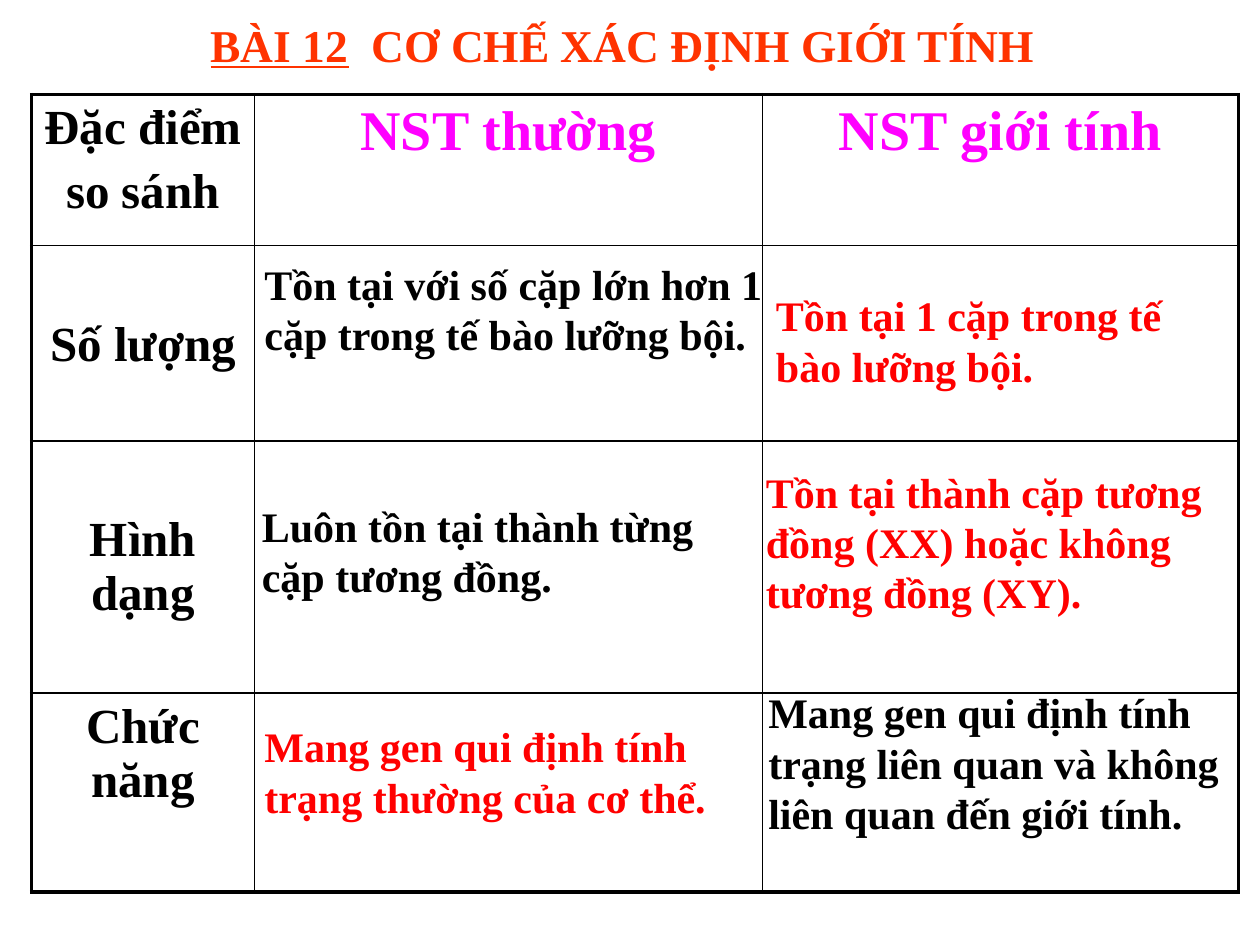
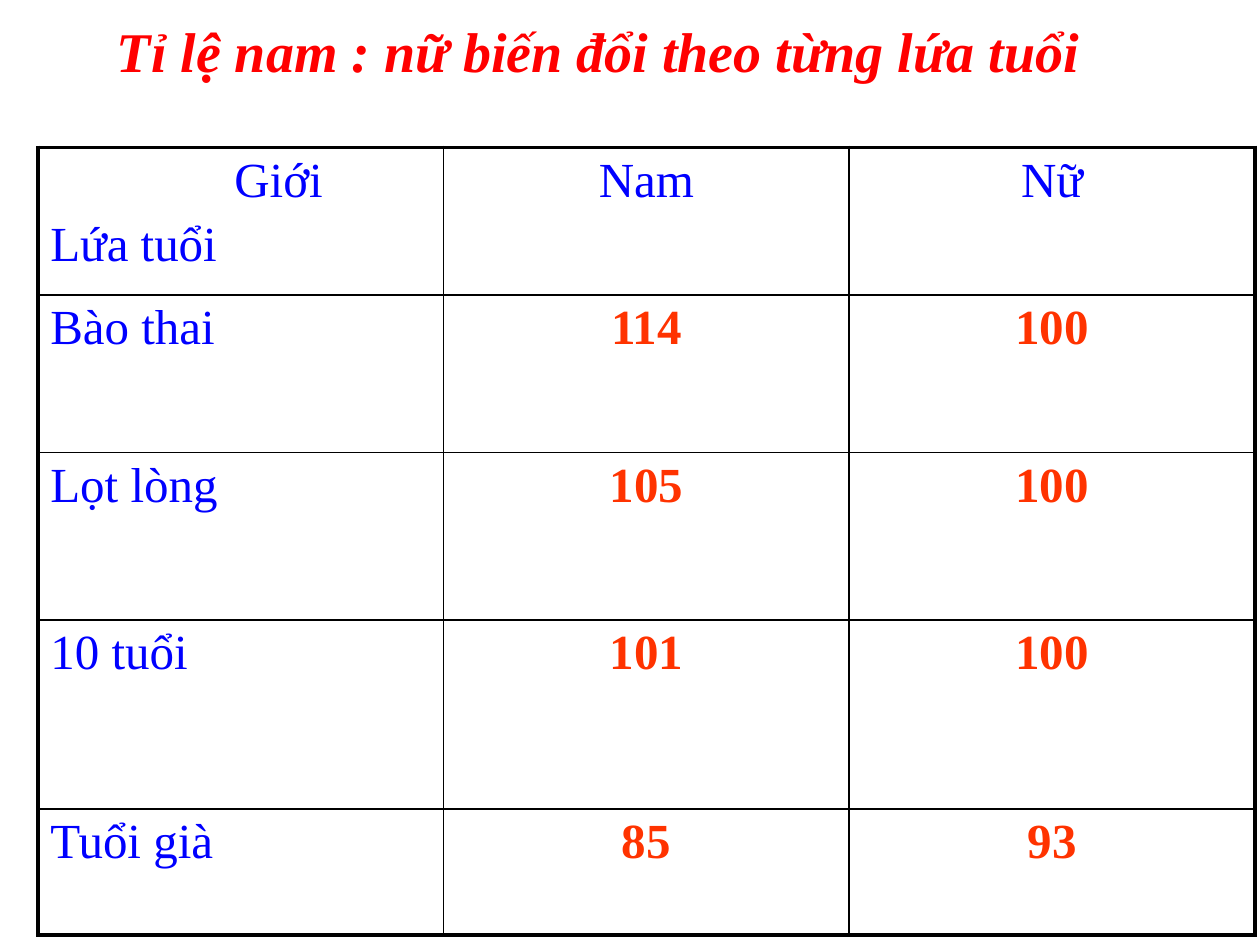
from lxml.etree import SubElement
from pptx import Presentation
from pptx.dml.color import RGBColor
from pptx.enum.text import MSO_AUTO_SIZE, PP_ALIGN
from pptx.oxml.ns import qn
from pptx.util import Inches, Pt

FONT = "Times New Roman"
BLACK = RGBColor(0, 0, 0)
WHITE = RGBColor(255, 255, 255)
RED = RGBColor(255, 0, 0)
ORANGE = RGBColor(255, 0x33, 0)
MAGENTA = RGBColor(255, 0, 255)
BLUE = RGBColor(0, 0, 255)
THICK, THIN = 2.25, 1

LESSON, LESSON_TITLE = "BÀI 12", "  CƠ CHẾ XÁC ĐỊNH GIỚI TÍNH"
COMPARE_COLS = [1.77, 4.03, 3.78]
COMPARE_ROWS = [1.2, 1.55, 2, 1.58]
COMPARE_HEADERS = ["NST thường", "NST giới tính"]
# row label lines, top margin of the label cell
COMPARE_LABELS = [
    (["Đặc điểm", "so sánh"], 0.05),
    (["Số lượng"], 0.57),
    (["Hình dạng"], 0.57),
    (["Chức năng"], 0.05),
]
# text, left, top, width, height, colour
ANSWERS = [
    ("Tồn tại với số cặp lớn hơn 1 cặp trong tế bào lưỡng bội.", 2, 2, 4.25, 0.91, BLACK),
    ("Luôn tồn tại thành từng cặp tương đồng.", 1.98, 3.92, 4.08, 0.91, BLACK),
    ("Mang gen qui định tính trạng thường của cơ thể.", 2, 5.67, 3.92, 0.91, RED),
    ("Tồn tại 1 cặp trong tế bào lưỡng bội.", 6.06, 2.25, 3.75, 0.91, RED),
    ("Tồn tại thành cặp tương đồng (XX) hoặc không tương đồng (XY).",
     5.98, 3.65, 4, 1.31, RED),
    ("Mang gen qui định tính trạng liên quan và không liên quan đến giới tính.",
     6, 5.4, 4, 1.31, BLACK),
]

RATIO_TITLE = "Tỉ lệ nam : nữ biến đổi theo từng lứa tuổi"
RATIO_CORNER = ["Giới", "Lứa tuổi"]
RATIO_HEADERS = ["Nam", "Nữ"]
RATIO_COLS = [3.22] * 3
RATIO_ROWS = [1.17, 1.25, 1.33, 1.5, 1]
RATIOS = [
    ("Bào thai", 114, 100),
    ("Lọt lòng", 105, 100),
    ("10 tuổi", 101, 100),
    ("Tuổi già", 85, 93),
]


def add_run(p, text, size=28, color=BLACK, bold=True, italic=False, underline=False):
    r = p.add_run()
    r.text = text
    f = r.font
    f.name, f.size, f.bold, f.italic, f.underline = FONT, Pt(size), bold, italic, underline
    f.color.rgb = color


def write(tf, *lines, align=PP_ALIGN.LEFT, **fmt):
    """Put each line in its own paragraph, spaced apart by a fifth of 28 points."""
    tf.word_wrap = True
    for i, line in enumerate(lines):
        p = tf.add_paragraph() if i else tf.paragraphs[0]
        p.alignment = align
        if i:
            p.space_before = Pt(5.6)
        add_run(p, line, **fmt)


def add_text(s, text, left, top, width, height, **fmt):
    sp = s.shapes.add_textbox(*map(Inches, (left, top, width, height)))
    write(sp.text_frame, text, **fmt)
    sp.text_frame.auto_size = MSO_AUTO_SIZE.SHAPE_TO_FIT_TEXT


def set_borders(cell, widths):
    tc_pr = cell._tc.get_or_add_tcPr()
    for side, width in zip("LRTB", widths):
        ln = SubElement(tc_pr, qn(f"a:ln{side}"), w=str(Pt(width)))
        fill = SubElement(ln, qn("a:solidFill"))
        SubElement(fill, qn("a:srgbClr"), val=str(BLACK))


def add_grid(s, left, top, cols, rows):
    """Add an unfilled table with a thick frame and thin inner lines."""
    frame = s.shapes.add_table(len(rows), len(cols), Inches(left), Inches(top),
                               Inches(sum(cols)), Inches(sum(rows)))
    table = frame.table
    table.first_row = table.horz_banding = False
    for col, width in zip(table.columns, cols):
        col.width = Inches(width)
    for row, height in zip(table.rows, rows):
        row.height = Inches(height)
    last_row, last_col = len(rows) - 1, len(cols) - 1
    for i in range(len(rows)):
        for j in range(len(cols)):
            cell = table.cell(i, j)
            on_frame = (j == 0, j == last_col, i == 0, i == last_row)
            set_borders(cell, [THICK if edge else THIN for edge in on_frame])
            cell.fill.background()
    return table


def add_slide(prs):
    s = prs.slides.add_slide(prs.slide_layouts[6])
    s.background.fill.solid()
    s.background.fill.fore_color.rgb = WHITE
    return s


def build_comparison(prs):
    s = add_slide(prs)
    sp = s.shapes.add_textbox(0, 0, prs.slide_width, prs.slide_height)
    tf = sp.text_frame
    tf.word_wrap = True
    p = tf.paragraphs[0]
    p.alignment = PP_ALIGN.CENTER
    add_run(p, LESSON, size=26, color=ORANGE, underline=True)
    add_run(p, LESSON_TITLE, size=26, color=ORANGE)
    add_run(p, " ", size=32, color=RED)

    table = add_grid(s, 0.25, 0.75, COMPARE_COLS, COMPARE_ROWS)
    for i, (lines, margin) in enumerate(COMPARE_LABELS):
        cell = table.cell(i, 0)
        cell.margin_top = Inches(margin)
        write(cell.text_frame, *lines, align=PP_ALIGN.CENTER)
    for j, header in enumerate(COMPARE_HEADERS, 1):
        write(table.cell(0, j).text_frame, header, size=32, color=MAGENTA,
              align=PP_ALIGN.CENTER)
    for text, left, top, width, height, color in ANSWERS:
        add_text(s, text, left, top, width, height, size=24, color=color)


def build_ratios(prs):
    s = add_slide(prs)
    table = add_grid(s, 0.3, 1.17, RATIO_COLS, RATIO_ROWS)
    corner = table.cell(0, 0).text_frame
    write(corner, *RATIO_CORNER, color=BLUE, bold=False)
    corner.paragraphs[0]._p.get_or_add_pPr().set("marL", str(Inches(1.46)))
    for j, header in enumerate(RATIO_HEADERS, 1):
        write(table.cell(0, j).text_frame, header, color=BLUE, bold=False,
              align=PP_ALIGN.CENTER)
    for i, (age, *counts) in enumerate(RATIOS, 1):
        write(table.cell(i, 0).text_frame, age, color=BLUE, bold=False)
        for j, count in enumerate(counts, 1):
            write(table.cell(i, j).text_frame, str(count), color=ORANGE,
                  align=PP_ALIGN.CENTER)
    add_text(s, RATIO_TITLE, 0.83, 0.08, 8.75, 0.64, size=32, color=RED, italic=True,
             align=PP_ALIGN.JUSTIFY)


def main():
    prs = Presentation()
    prs.slide_width, prs.slide_height = Inches(10), Inches(7.5)
    build_comparison(prs)
    build_ratios(prs)
    prs.save("out.pptx")


if __name__ == "__main__":
    main()
